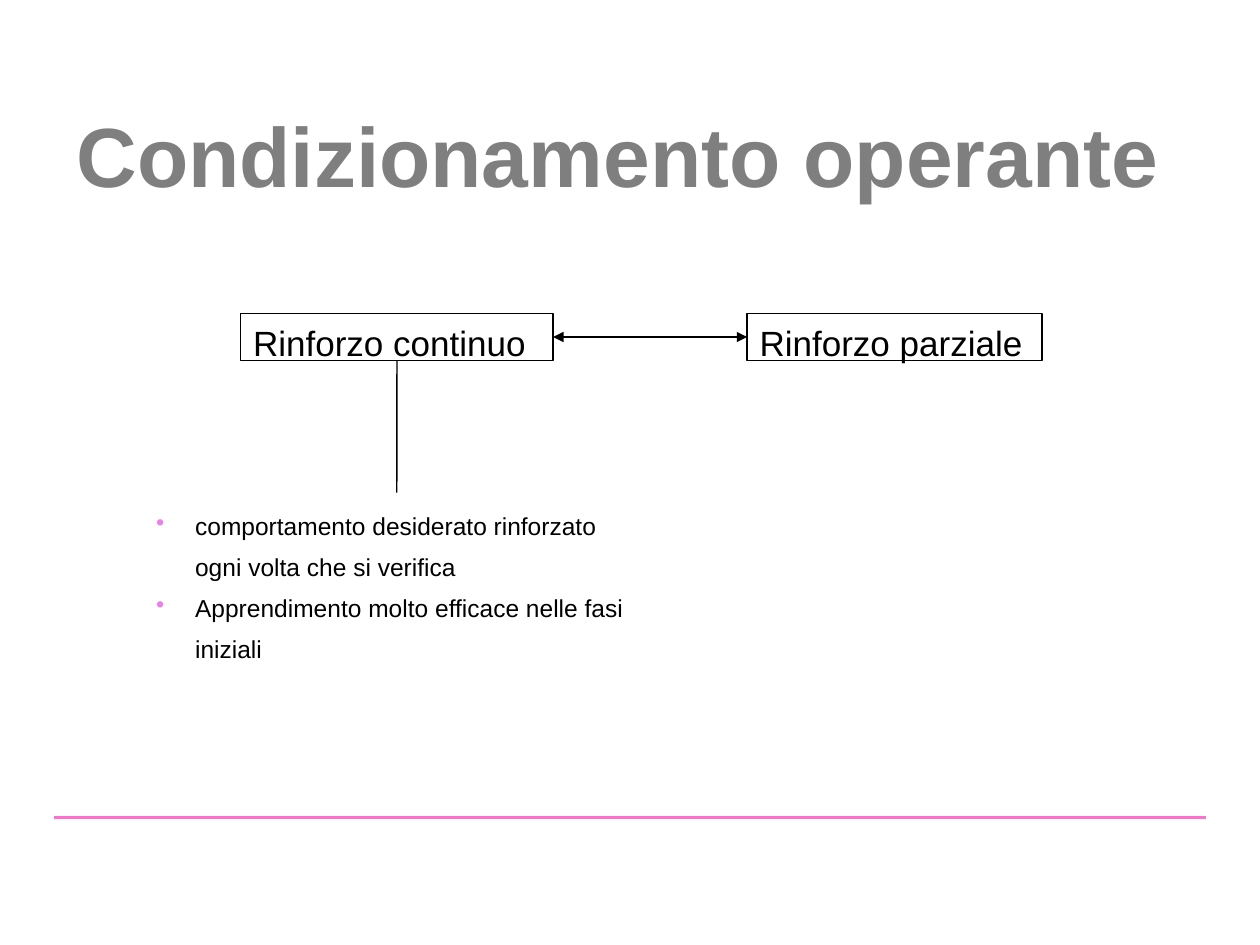
from dataclasses import dataclass

from lxml import etree
from pptx import Presentation
from pptx.dml.color import RGBColor
from pptx.enum.shapes import MSO_CONNECTOR, MSO_SHAPE
from pptx.enum.text import MSO_ANCHOR, PP_ALIGN
from pptx.oxml.ns import qn
from pptx.util import Inches, Pt

STRAIGHT = MSO_CONNECTOR.STRAIGHT
RECTANGLE = MSO_SHAPE.RECTANGLE
TOP, BOTTOM = MSO_ANCHOR.TOP, MSO_ANCHOR.BOTTOM
LEFT, CENTER = PP_ALIGN.LEFT, PP_ALIGN.CENTER
SIDE_TOP, SIDE_LEFT, SIDE_BOTTOM, SIDE_RIGHT = range(4)


@dataclass(frozen=True)
class Theme:
    font: str = "Arial"
    ink: str = "000000"
    title_color: str = "7F7F7F"
    rule_color: str = "FF6FCF"
    bullet_color: str = "EA81E9"
    title_size: int = 48
    label_size: int = 20
    body_size: int = 14
    thin: float = 0.75
    thick: float = 2


def set_values(target, values):
    for name, value in values.items():
        setattr(target, name, value)


class SlideBuilder:
    def __init__(self, slide, theme):
        self.slide = slide
        self.theme = theme

    def fill_paragraph(self, paragraph, text, size, color, bold=False):
        paragraph.text = text
        set_values(paragraph.font, {"name": self.theme.font, "size": Pt(size), "bold": bold})
        paragraph.font.color.rgb = RGBColor.from_string(color)

    def text_box(self, left, top, width, height, anchor=TOP):
        box = self.slide.shapes.add_textbox(*map(Inches, (left, top, width, height)))
        set_values(box.text_frame, {"word_wrap": True, "vertical_anchor": anchor})
        return box

    def title(self, text, *place):
        paragraph = self.text_box(*place, anchor=BOTTOM).text_frame.paragraphs[0]
        paragraph.alignment = CENTER
        self.fill_paragraph(paragraph, text, self.theme.title_size,
                            self.theme.title_color, bold=True)

    def bullets(self, items, *place):
        box = self.text_box(*place)
        frame = box.text_frame
        indent = Inches(0.31)
        for index, item in enumerate(items):
            paragraph = frame.add_paragraph() if index else frame.paragraphs[0]
            paragraph.line_spacing = 1.4
            properties = paragraph._p.get_or_add_pPr()
            properties.set("marL", str(indent))
            properties.set("indent", str(-indent))
            color = etree.SubElement(properties, qn("a:buClr"))
            etree.SubElement(color, qn("a:srgbClr"), val=self.theme.bullet_color)
            etree.SubElement(properties, qn("a:buChar"), char="•")
            self.fill_paragraph(paragraph, item, self.theme.body_size, self.theme.ink)
        return box

    def label(self, text, *place):
        box = self.slide.shapes.add_shape(RECTANGLE, *map(Inches, place))
        box.shadow.inherit = False
        box.fill.background()
        box.line.color.rgb = RGBColor.from_string(self.theme.ink)
        box.line.width = Pt(self.theme.thin)
        frame = box.text_frame
        set_values(frame, {"word_wrap": True, "vertical_anchor": TOP, "margin_right": 0,
                           "margin_top": Inches(0.06), "margin_bottom": 0})
        frame.paragraphs[0].alignment = LEFT
        self.fill_paragraph(frame.paragraphs[0], text, self.theme.label_size, self.theme.ink)
        return box

    def line(self, start, end, color, width, arrows=False):
        connector = self.slide.shapes.add_connector(STRAIGHT, *map(Inches, start + end))
        connector.line.color.rgb = RGBColor.from_string(color)
        connector.line.width = Pt(width)
        if arrows:
            outline = connector.line._get_or_add_ln()
            for tag in ("a:headEnd", "a:tailEnd"):
                etree.SubElement(outline, qn(tag), type="triangle")
        etree.SubElement(connector._element.spPr, qn("a:effectLst"))
        return connector

    def join(self, first, first_side, second, second_side, arrows=False):
        connector = self.line((0, 0), (1, 1), self.theme.ink, self.theme.thin, arrows)
        connector.begin_connect(first, first_side)
        connector.end_connect(second, second_side)


def main():
    presentation = Presentation()
    presentation.slide_width, presentation.slide_height = Inches(10), Inches(7.5)
    theme = Theme()
    builder = SlideBuilder(presentation.slides.add_slide(presentation.slide_layouts[6]), theme)

    # Footer rule and title
    builder.line((0.43, 6.49), (9.57, 6.49), theme.rule_color, theme.thick)
    builder.title("Condizionamento operante", 0.42, 0.76, 8.97, 0.91)

    # Features of continuous reinforcement
    features = builder.bullets(
        ["comportamento desiderato rinforzato ogni volta che si verifica",
         "Apprendimento molto efficace nelle fasi iniziali"],
        1.14, 3.91, 4.02, 1.42)

    # The two kinds of reinforcement
    continuous = builder.label("Rinforzo continuo", 1.91, 2.49, 2.48, 0.37)
    partial = builder.label("Rinforzo parziale", 5.93, 2.49, 2.34, 0.37)

    # Links between the parts
    builder.join(continuous, SIDE_BOTTOM, features, SIDE_TOP)
    builder.join(continuous, SIDE_RIGHT, partial, SIDE_LEFT, arrows=True)

    presentation.save("out.pptx")


if __name__ == "__main__":
    main()
